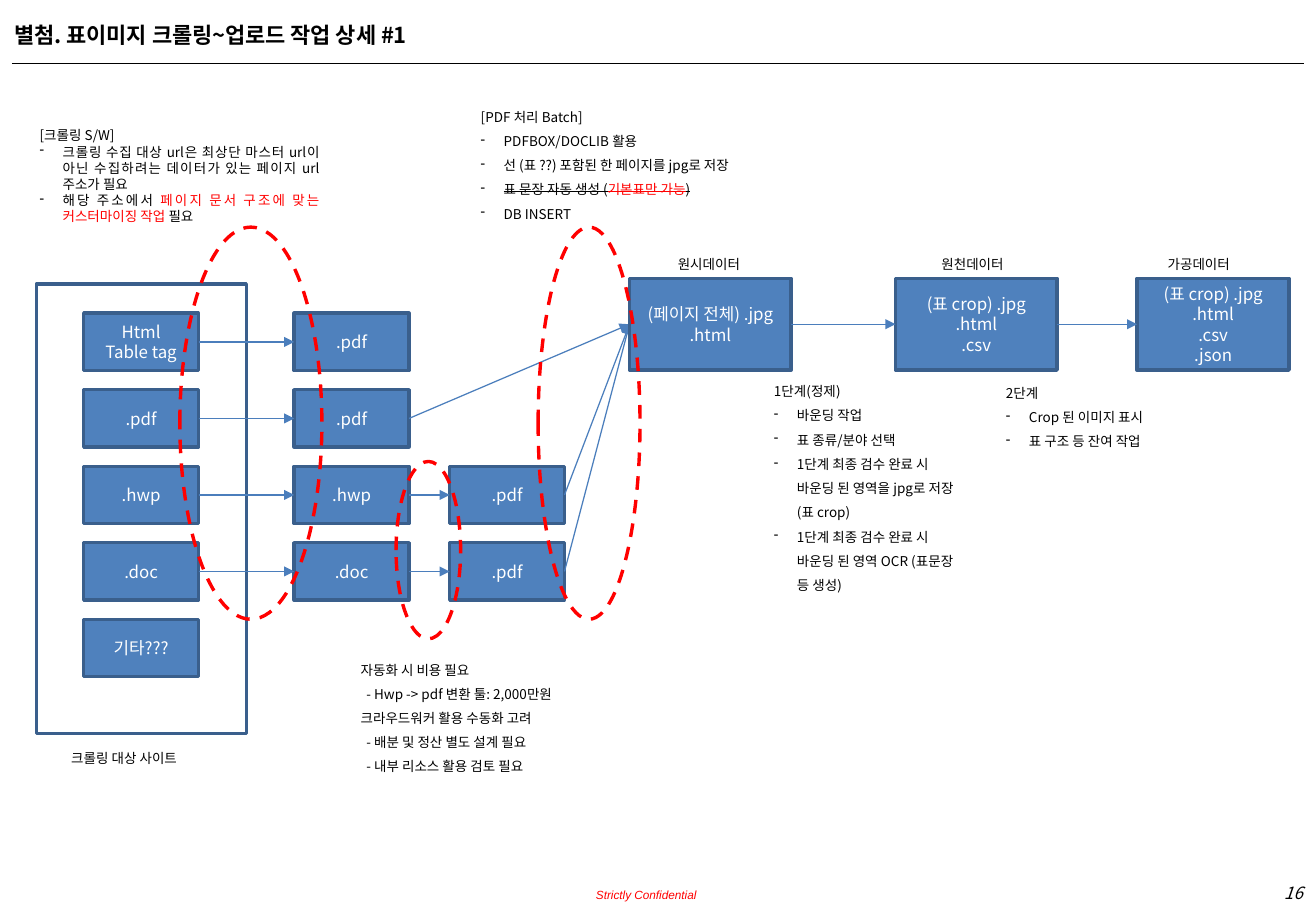
from lxml.etree import SubElement
from pptx import Presentation
from pptx.dml.color import RGBColor
from pptx.enum.dml import MSO_LINE
from pptx.enum.shapes import MSO_CONNECTOR, MSO_SHAPE
from pptx.enum.text import MSO_ANCHOR, MSO_AUTO_SIZE, PP_ALIGN as Align
from pptx.oxml.ns import qn
from pptx.util import Cm, Pt

COLORS = {"text": "000000", "alert": "FF0000", "box": "4F81BD",
          "edge": "3A5F8C", "arrow": "4B7EBC", "light": "FFFFFF"}


class FlowSlide:
    """Holds the slide style and draws boxes, arrows, rings and notes."""

    font = "Noto Sans CJK KR"

    def __init__(self, slide):
        self.shapes = slide.shapes

    def color(self, name):
        return RGBColor.from_string(COLORS[name])

    def style_run(self, run, size, color, font=None, bold=False, italic=False):
        run.font.size, run.font.bold, run.font.italic = Pt(size), bold, italic
        run.font.name = font or self.font
        run.font.color.rgb = self.color(color)
        SubElement(run.font._element, qn("a:ea")).set("typeface", font or self.font)

    def outline(self, kind, area, line, fill=None, dashed=False):
        shape = self.shapes.add_shape(kind, *map(Cm, area))
        shape.shadow.inherit = False
        shape.line.color.rgb = self.color(line)
        shape.line.width = Pt(2)
        if dashed:
            shape.line.dash_style = MSO_LINE.DASH
        if fill:
            shape.fill.solid()
            shape.fill.fore_color.rgb = self.color(fill)
        else:
            shape.fill.background()
        return shape

    def box(self, area, text):
        shape = self.outline(MSO_SHAPE.RECTANGLE, area, "edge", "box")
        shape.text_frame.text = text
        shape.text_frame.vertical_anchor = MSO_ANCHOR.MIDDLE
        for paragraph in shape.text_frame.paragraphs:
            paragraph.alignment = Align.CENTER
            for run in paragraph.runs:
                self.style_run(run, 10, "light")

    def ring(self, area):
        self.outline(MSO_SHAPE.OVAL, area, "alert", dashed=True)

    def line(self, start, end, color="arrow", arrow=True):
        connector = self.shapes.add_connector(
            MSO_CONNECTOR.STRAIGHT, *map(Cm, (*start, *end)))
        connector.line.color.rgb = self.color(color)
        connector.line.width = Pt(0.75)
        if arrow:
            SubElement(connector.line._get_or_add_ln(), qn("a:tailEnd")).set("type", "triangle")
        SubElement(connector._element.spPr, qn("a:effectLst"))

    def indent(self, paragraph, left, first=0):
        properties = paragraph._p.get_or_add_pPr()
        properties.set("marL", str(Cm(left)))
        properties.set("indent", str(Cm(first)))
        return properties

    def text(self, area, text, size, align=Align.LEFT, color="text", **style):
        shape = self.shapes.add_textbox(*map(Cm, area))
        frame = shape.text_frame
        frame.word_wrap = True
        frame.text = text
        frame.paragraphs[0].alignment = align
        self.style_run(frame.paragraphs[0].runs[0], size, color, **style)
        return frame

    def note(self, area, heading, bullets=(), lines=(), spacing=1.5, align=Align.LEFT):
        frame = self.text(area, heading, 8, align)
        frame.auto_size = MSO_AUTO_SIZE.SHAPE_TO_FIT_TEXT
        frame.paragraphs[0].line_spacing = spacing
        for item in (*bullets, *lines):
            paragraph = frame.add_paragraph()
            paragraph.line_spacing = spacing
            paragraph.alignment = align
            parts = [(item, "text", False)] if isinstance(item, str) else item
            for words, color, struck in parts:
                run = paragraph.add_run()
                run.text = words
                self.style_run(run, 8, color)
                if struck:
                    run.font._element.set("strike", "sngStrike")
            if item in bullets:
                properties = self.indent(paragraph, 0.48, -0.48)
                SubElement(properties, qn("a:buChar")).set("char", "-")
            elif item.startswith("- "):
                self.indent(paragraph, 0.12)


def main():
    presentation = Presentation()
    presentation.slide_width, presentation.slide_height = Cm(27.51), Cm(19.05)
    flow = FlowSlide(presentation.slides.add_slide(presentation.slide_layouts[6]))

    flow.text((0.05, 0.33, 26.72, 0.81), "별첨. 표이미지 크롤링~업로드 작업 상세 #1", 13, bold=True)
    flow.line((0.25, 1.32), (27.25, 1.32), "text", arrow=False)
    footer = flow.text((10.67, 18.24, 3.89, 0.61), "Strictly Confidential", 7,
                       Align.RIGHT, "alert", font="Arial", italic=True)
    footer.margin_left = footer.margin_right = footer.margin_top = footer.margin_bottom = 0
    footer.vertical_anchor = MSO_ANCHOR.BOTTOM
    flow.text((23.24, 18.34, 4.24, 0.69), "16", 10, Align.RIGHT, italic=True)

    flow.outline(MSO_SHAPE.RECTANGLE, (0.76, 5.94, 4.39, 9.4), "edge")
    width, height, top, pitch = 2.4, 1.2, 6.55, 1.6
    site_x, file_x, converted_x = 1.75, 6.15, 9.4
    columns = [(site_x, 0, ["Html\nTable tag", ".pdf", ".hwp", ".doc", "기타???"]),
               (file_x, 0, [".pdf", ".pdf", ".hwp", ".doc"]),
               (converted_x, 2, [".pdf", ".pdf"])]
    for left, first_row, labels in columns:
        for row, label in enumerate(labels, first_row):
            flow.box((left, top + row * pitch, width, height), label)

    data_y, raw_x = 6.78, 13.16
    middles = [top + height / 2 + row * pitch for row in range(4)]
    for middle in middles:
        flow.line((site_x + width, middle), (file_x, middle))
    for middle in middles[2:]:
        flow.line((file_x + width, middle), (converted_x, middle))
        flow.line((converted_x + width, middle), (raw_x, data_y))
    flow.line((file_x + width, middles[1]), (raw_x, data_y))

    stages = [(raw_x, 3.38, 13.92, "원시데이터", "(페이지 전체) .jpg\n.html"),
              (18.72, 3.38, 19.43, "원천데이터", "(표 crop) .jpg\n.html\n.csv"),
              (23.77, 3.18, 24.16, "가공데이터", "(표 crop) .jpg\n.html\n.csv\n.json")]
    for left, stage_width, label_x, label, files in stages:
        flow.box((left, 5.82, stage_width, 1.92), files)
        flow.note((label_x, 5.07, 2.39, 0.71), label)
    for source, target in zip(stages, stages[1:]):
        flow.line((source[0] + source[1], data_y), (target[0], data_y))

    flow.note((0.58, 2.54, 6.35, 2.31), "[크롤링 S/W]", [
        "크롤링 수집 대상 url은 최상단 마스터 url이 아닌 수집하려는 데이터가 있는 페이지 url 주소가 필요",
        [("해당 주소에서 ", "text", False),
         ("페이지 문서 구조에 맞는 커스터마이징 작업", "alert", False),
         (" 필요", "text", False)]], spacing=1.0, align=Align.JUSTIFY)
    flow.note((1.24, 15.39, 3.4, 0.71), "크롤링 대상 사이트")
    flow.note((9.8, 1.98, 6.76, 2.74), "[PDF 처리 Batch]", [
        "PDFBOX/DOCLIB 활용",
        "선 (표 ??) 포함된 한 페이지를 jpg로 저장",
        [("표 문장 자동 생성 (", "text", True),
         ("기본표만 가능", "alert", True),
         (")", "text", True)],
        "DB INSERT"])
    flow.note((7.29, 13.54, 5.16, 2.74), "자동화 시 비용 필요", lines=[
        "- Hwp -> pdf 변환 툴: 2,000만원",
        "크라우드워커 활용 수동화 고려",
        "- 배분 및 정산 별도 설계 필요",
        "- 내부 리소스 활용 검토 필요"])
    flow.note((15.93, 7.72, 4.39, 5.31), "1단계(정제)", [
        "바운딩 작업",
        "표 종류/분야 선택",
        "1단계 최종 검수 완료 시 바운딩 된 영역을 jpg로 저장 (표 crop)",
        "1단계 최종 검수 완료 시 바운딩 된 영역 OCR (표문장 등 생성)"])
    flow.note((20.78, 7.75, 4.19, 1.73), "2단계", ["Crop 된 이미지 표시", "표 구조 등 잔여 작업"])

    for area in [(8.28, 9.65, 1.35, 3.71), (3.76, 4.75, 2.97, 8.2), (11.25, 4.75, 2.13, 8.2)]:
        flow.ring(area)

    presentation.save("out.pptx")


if __name__ == "__main__":
    main()
